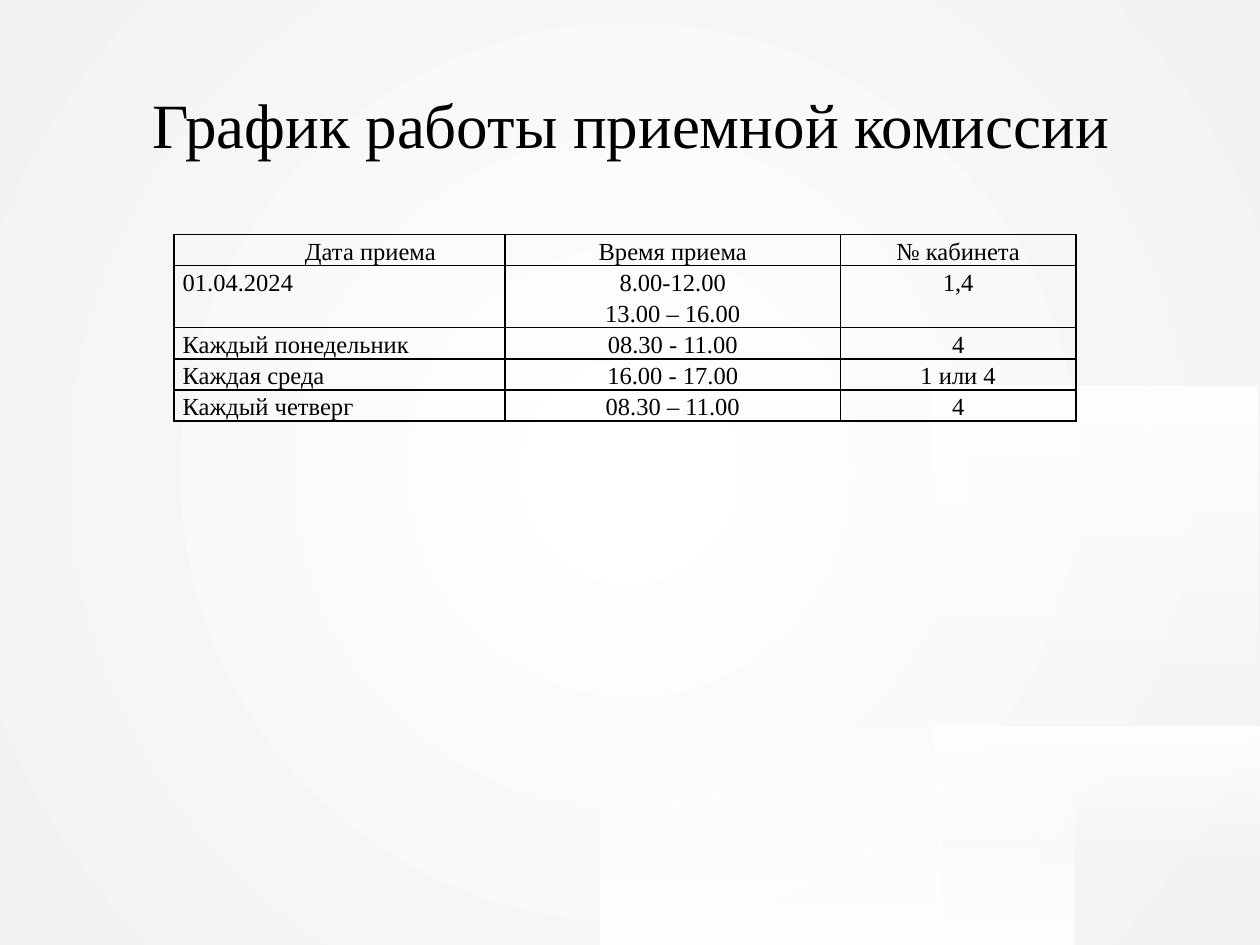
from pptx import Presentation
from pptx.dml.color import RGBColor
from pptx.enum.shapes import MSO_SHAPE
from pptx.enum.text import MSO_ANCHOR, PP_ALIGN as Align
from pptx.oxml import parse_xml
from pptx.oxml.ns import nsdecls, qn
from pptx.util import Inches, Pt

COLORS = {"ink": "000000", "white": "FFFFFF", "mist": "F2F2F2"}
FONT = "Times New Roman"

HEADINGS = ["Дата приема", "Время приема", "№ кабинета"]
SCHEDULE = [
    ["01.04.2024", "8.00-12.00\n13.00 – 16.00", "1,4"],
    ["Каждый понедельник", "08.30 - 11.00", "4"],
    ["Каждая среда", "16.00 - 17.00", "1 или 4"],
    ["Каждый четверг", "08.30 – 11.00", "4"],
]
COLUMN_WIDTHS = [2.63, 2.66, 1.87]
LINE_HEIGHT = 0.24

GLOWS = [
    ((7.11, 6.09, 1.72, 1.11), 270, 0),
    ((7.42, 5.77, 2.58, 1.11), 0, 90),
    ((7.4, 3.07, 2.58, 2.71), 180, 270),
    ((4.83, 4.85, 2.58, 2.71), 90, 180),
]


class SlideBuilder:
    """Holds the deck style and draws elements on the current slide."""

    def __init__(self, deck, font, colors):
        self.slide = deck.slides.add_slide(deck.slide_layouts[5])
        self.font = font
        self.colors = colors

    def style(self, paragraph, size, align):
        paragraph.alignment = align
        paragraph.font.name = self.font
        paragraph.font.size = Pt(size)
        paragraph.font.color.rgb = RGBColor.from_string(self.colors["ink"])

    def gradient(self, box, end, shade, rotation=0, end_alpha=100):
        panel = self.slide.shapes.add_shape(MSO_SHAPE.RECTANGLE, *map(Inches, box))
        panel.rotation = rotation
        panel.shadow.inherit = False
        panel.line.fill.background()
        panel.fill.background()
        properties = panel.element.spPr
        properties.replace(properties.find(qn("a:noFill")), parse_xml(
            f'<a:gradFill {nsdecls("a")} rotWithShape="1"><a:gsLst>'
            f'<a:gs pos="0"><a:srgbClr val="{self.colors["white"]}"/></a:gs>'
            f'<a:gs pos="100000"><a:srgbClr val="{self.colors[end]}">'
            f'<a:alpha val="{end_alpha * 1000}"/></a:srgbClr></a:gs>'
            f'</a:gsLst>{shade}</a:gradFill>'))

    def radial(self, box):
        self.gradient(box, "mist", '<a:path path="circle"><a:fillToRect '
                      'l="50000" t="50000" r="50000" b="50000"/></a:path>')

    def glow(self, box, rotation, angle):
        self.gradient(box, "white", f'<a:lin ang="{angle * 60000}" scaled="0"/>',
                      rotation, end_alpha=0)

    def title(self, text, box, size):
        title = self.slide.shapes.title
        title.left, title.top, title.width, title.height = map(Inches, box)
        frame = title.text_frame
        frame.margin_left = frame.margin_right = 0
        frame.margin_top = frame.margin_bottom = 0
        frame.vertical_anchor = MSO_ANCHOR.MIDDLE
        frame.word_wrap = True
        frame.text = text
        self.style(frame.paragraphs[0], size, Align.CENTER)
        title.element.getparent().append(title.element)

    def cell(self, cell, text, align, indent):
        cell.margin_left = cell.margin_right = Inches(0.07)
        cell.margin_top = cell.margin_bottom = 0
        cell.text = text
        for paragraph in cell.text_frame.paragraphs:
            self.style(paragraph, 14, align)
            paragraph.line_spacing = 1.15
            if indent:
                properties = paragraph._p.get_or_add_pPr()
                properties.set("marL", "0")
                properties.set("indent", str(Inches(indent)))
        borders = cell._tc.get_or_add_tcPr()
        for side in ("lnL", "lnR", "lnT", "lnB"):
            borders.append(parse_xml(
                f'<a:{side} {nsdecls("a")} w="{Pt(1)}"><a:solidFill>'
                f'<a:srgbClr val="{self.colors["ink"]}"/></a:solidFill></a:{side}>'))
        cell.fill.background()

    def table(self, rows, left, top, widths, line_height):
        heights = [line_height * max(text.count("\n") + 1 for text in row) for row in rows]
        table = self.slide.shapes.add_table(
            len(rows), len(widths), Inches(left), Inches(top),
            Inches(sum(widths)), Inches(sum(heights))).table
        table.first_row = table.horz_banding = False
        for column, width in zip(table.columns, widths):
            column.width = Inches(width)
        for r, (row, height) in enumerate(zip(rows, heights)):
            table.rows[r].height = Inches(height)
            for c, text in enumerate(row):
                align = Align.LEFT if c == 0 and r > 0 else Align.CENTER
                indent = 0.49 if r == c == 0 else -0.07 if c == 2 else 0
                self.cell(table.cell(r, c), text, align, indent)


def main():
    deck = Presentation()
    deck.slide_width, deck.slide_height = Inches(10), Inches(7.5)
    builder = SlideBuilder(deck, FONT, COLORS)
    builder.radial((0, 0, 10, 7.5))
    for box, rotation, angle in GLOWS:
        builder.glow(box, rotation, angle)
    builder.title("График работы приемной комиссии", (0.51, 0.29, 9, 1.37), 36)
    builder.table([HEADINGS, *SCHEDULE], 1.38, 1.86, COLUMN_WIDTHS, LINE_HEIGHT)
    deck.save("out.pptx")


if __name__ == "__main__":
    main()
